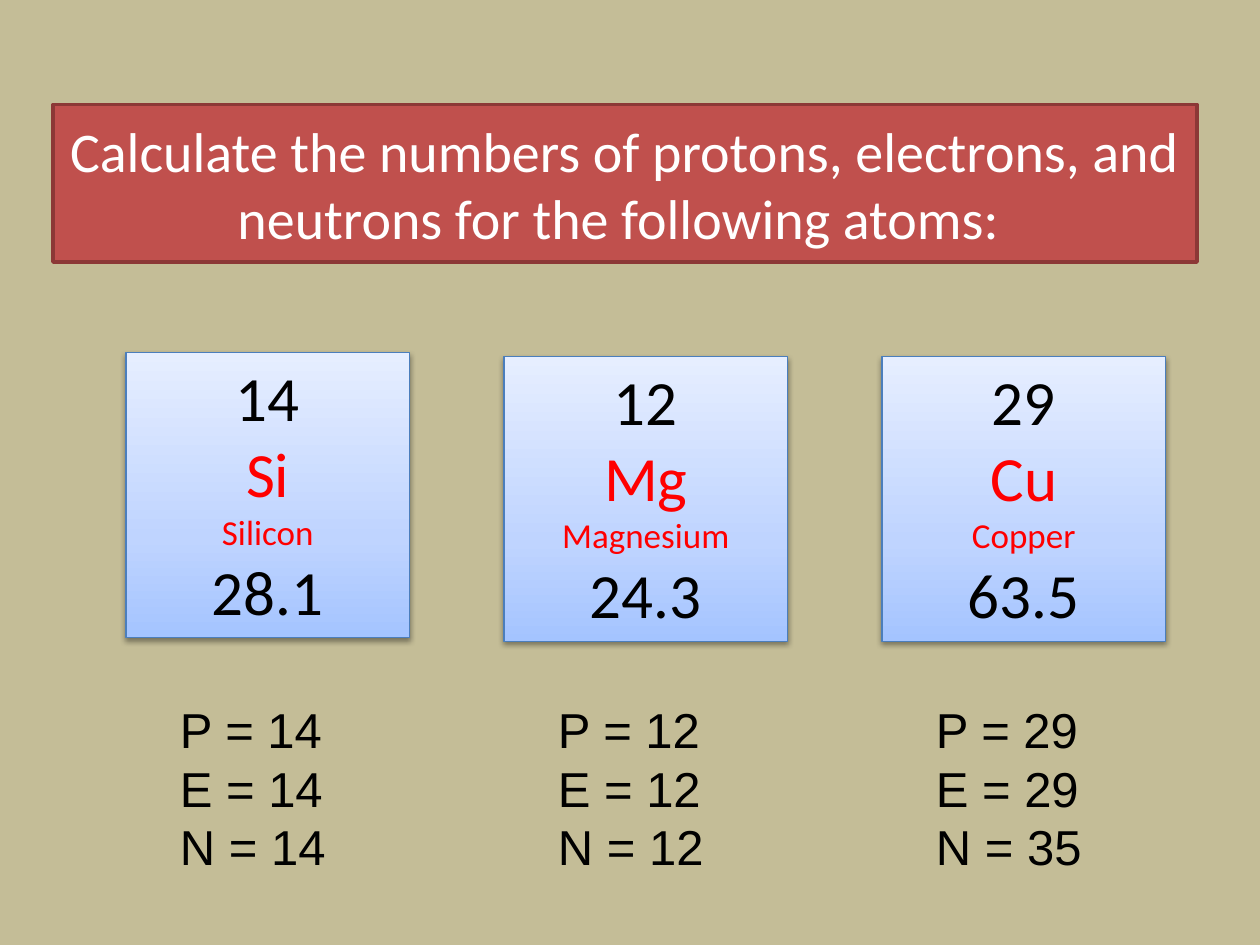
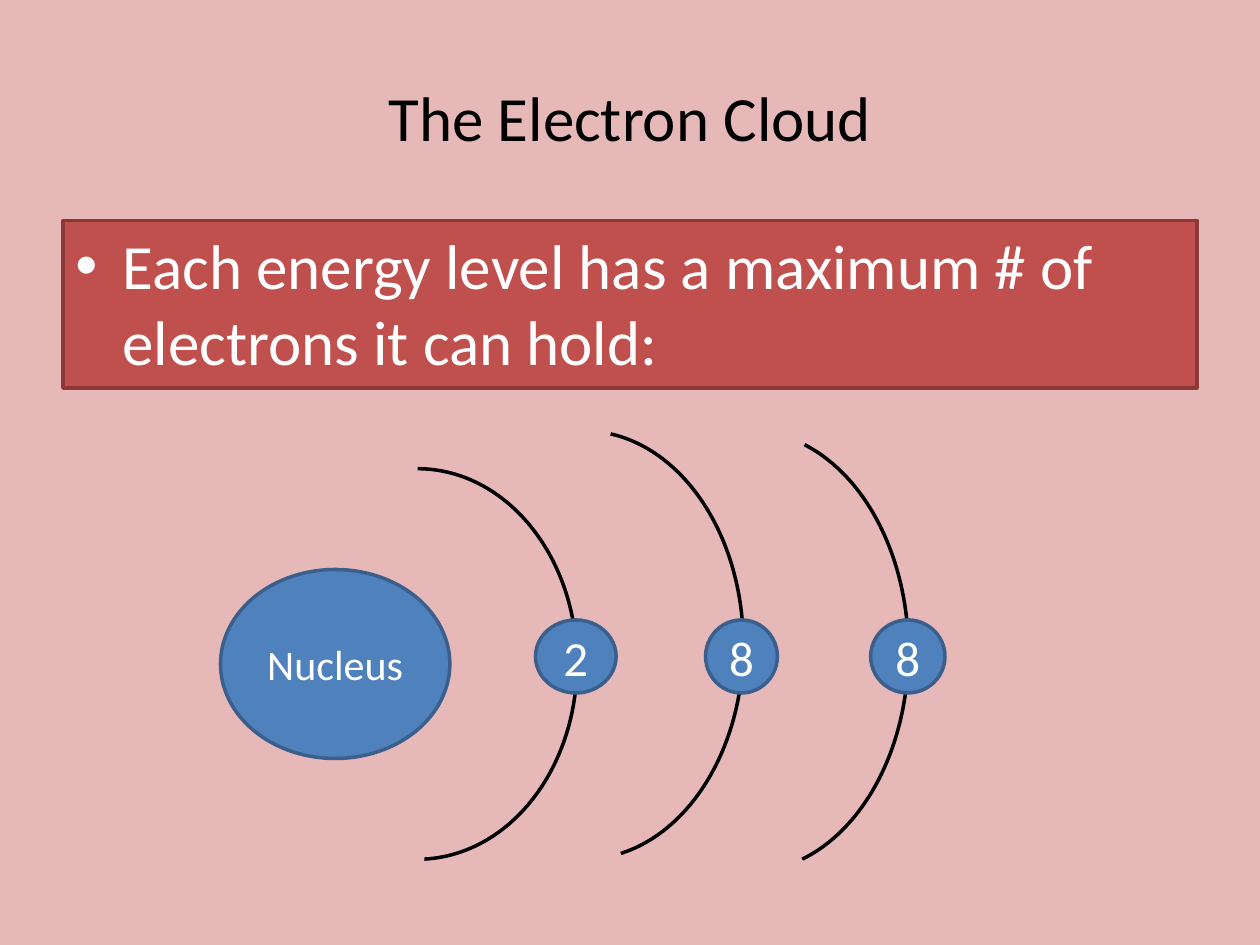
"""Build two chemistry slides: counting particles in atoms, and the electron cloud."""
from typing import NamedTuple

from pptx import Presentation
from pptx import util as u
from pptx.dml.color import RGBColor
from pptx.enum import shapes, text
from pptx.oxml import parse_xml
from pptx.oxml.ns import nsdecls, qn

WIDTH, HEIGHT = u.Inches(10), u.Inches(7.5)
COLUMNS, ROWS = 40, 30

KHAKI = RGBColor(0xC4, 0xBD, 0x97)
PINK = RGBColor(0xE6, 0xB9, 0xB8)
BRICK = RGBColor(0xC0, 0x50, 0x4D)
BRICK_EDGE = RGBColor(0x8C, 0x38, 0x36)
BLUE = RGBColor(0x4F, 0x81, 0xBD)
BLUE_EDGE = RGBColor(0x3A, 0x5F, 0x8C)
CARD_EDGE = RGBColor(0x4B, 0x7E, 0xBC)
CARD_STOPS = (
    (0, RGBColor(0xA4, 0xC4, 0xFF)),
    (35, RGBColor(0xBF, 0xD4, 0xFF)),
    (100, RGBColor(0xE6, 0xEE, 0xFF)),
)
RED = RGBColor(0xFF, 0x00, 0x00)
BLACK = RGBColor(0x00, 0x00, 0x00)
WHITE = RGBColor(0xFF, 0xFF, 0xFF)

CENTER, LEFT = text.PP_ALIGN.CENTER, text.PP_ALIGN.LEFT
TOP, MIDDLE = text.MSO_ANCHOR.TOP, text.MSO_ANCHOR.MIDDLE
KIND = shapes.MSO_SHAPE


class Cell(NamedTuple):
    column: float
    row: float
    columns: float
    rows: float

    def frame(self) -> tuple[int, int, int, int]:
        """Return left, top, width and height on the slide."""
        across, down = WIDTH / COLUMNS, HEIGHT / ROWS
        return (round(self.column * across), round(self.row * down),
                round(self.columns * across), round(self.rows * down))


class Line(NamedTuple):
    words: str
    size: float
    color: RGBColor
    font: str = "Calibri"


class Atom(NamedTuple):
    number: int
    symbol: str
    name: str
    mass: float
    row: float


class Level(NamedTuple):
    capacity: int
    orbit: Cell
    start: float
    end: float
    badge: Cell


ATOMS = (
    Atom(14, "Si", "Silicon", 28.1, 11.2),
    Atom(12, "Mg", "Magnesium", 24.3, 11.32),
    Atom(29, "Cu", "Copper", 63.5, 11.32),
)
LEVELS = (
    Level(2, Cell(8.2, 14.88, 10.12, 12.4), 270, 88, Cell(17, 19.68, 2.56, 2.32)),
    Level(8, Cell(13.48, 13.68, 10.12, 13.6), 277.2, 79.94, Cell(22.4, 19.68, 2.28, 2.32)),
    Level(8, Cell(18.72, 13.68, 10.12, 14), 285.02, 75.62, Cell(27.64, 19.68, 2.36, 2.32)),
)
FIRST_CARD, CARD_PITCH, CARD_SIDE = 4, 12, 9


def add_slide(deck, background: RGBColor):
    """Add a blank slide with a plain background."""
    slide = deck.slides.add_slide(deck.slide_layouts[6])
    slide.background.fill.solid()
    slide.background.fill.fore_color.rgb = background
    return slide


def write(shape, lines: list[Line], align=CENTER, anchor=MIDDLE, wrap: bool = True) -> None:
    """Write one paragraph for each line."""
    frame = shape.text_frame
    frame.word_wrap = wrap
    frame.vertical_anchor = anchor
    frame.text = "\n".join(line.words for line in lines)
    for paragraph, line in zip(frame.paragraphs, lines):
        paragraph.alignment = align
        paragraph.font.name = line.font
        paragraph.font.size = u.Pt(line.size)
        paragraph.font.color.rgb = line.color


def add_label(slide, cell: Cell, lines: list[Line], align=CENTER, anchor=MIDDLE):
    """Add unframed text."""
    label = slide.shapes.add_textbox(*cell.frame())
    write(label, lines, align, anchor)
    return label


def add_figure(slide, kind, cell: Cell, edge: RGBColor, weight: float = 2,
               fill: RGBColor | None = None):
    """Add a shadowless preset shape, hollow unless a fill is given."""
    figure = slide.shapes.add_shape(kind, *cell.frame())
    figure.shadow.inherit = False
    if fill is None:
        figure.fill.background()
    else:
        figure.fill.solid()
        figure.fill.fore_color.rgb = fill
    figure.line.color.rgb = edge
    figure.line.width = u.Pt(weight)
    return figure


def add_banner(slide, cell: Cell, line: Line, align=CENTER, anchor=MIDDLE):
    """Add a brick-red band with white text."""
    banner = add_figure(slide, KIND.RECTANGLE, cell, BRICK_EDGE, fill=BRICK)
    write(banner, [line], align, anchor)
    return banner


def add_bullet(paragraph, indent: int) -> None:
    """Give a paragraph a hanging round bullet."""
    properties = paragraph._p.get_or_add_pPr()
    properties.set("marL", str(indent))
    properties.set("indent", str(-indent))
    properties.append(parse_xml(f'<a:buFont {nsdecls("a")} typeface="Arial"/>'))
    properties.append(parse_xml(f'<a:buChar {nsdecls("a")} char="•"/>'))


def add_card(slide, cell: Cell, lines: list[Line]) -> None:
    """Add a periodic-table card with a gradient and a soft shadow."""
    card = add_figure(slide, KIND.RECTANGLE, cell, CARD_EDGE, 0.75)
    stops = "".join(f'<a:gs pos="{share * 1000}"><a:srgbClr val="{color}"/></a:gs>'
                    for share, color in CARD_STOPS)
    properties = card._element.spPr
    properties.replace(properties.find(qn("a:noFill")), parse_xml(
        f'<a:gradFill {nsdecls("a")} rotWithShape="1"><a:gsLst>{stops}</a:gsLst>'
        '<a:lin ang="16200000" scaled="0"/></a:gradFill>'))
    properties.find(qn("a:effectLst")).append(parse_xml(
        f'<a:outerShdw {nsdecls("a")} blurRad="{u.Pt(3.1)}" dist="{u.Pt(1.6)}" '
        'dir="5400000" rotWithShape="0"><a:srgbClr val="000000">'
        '<a:alpha val="38000"/></a:srgbClr></a:outerShdw>'))
    write(card, lines, anchor=TOP)


def add_orb(slide, cell: Cell, words: str, size: float) -> None:
    """Add a blue disc with white text."""
    orb = add_figure(slide, KIND.OVAL, cell, BLUE_EDGE, fill=BLUE)
    write(orb, [Line(words, size, WHITE)], wrap=False)


def build_atoms(deck) -> None:
    """Show three atoms with their particle counts."""
    slide = add_slide(deck, KHAKI)
    add_banner(slide, Cell(1.68, 3.32, 36.32, 5), Line(
        "Calculate the numbers of protons, electrons, and "
        "neutrons for the following atoms: ", 32, WHITE))
    for index, atom in enumerate(ATOMS):
        column = FIRST_CARD + index * CARD_PITCH
        add_card(slide, Cell(column, atom.row, CARD_SIDE, CARD_SIDE + 0.04), [
            Line(str(atom.number), 36, BLACK),
            Line(atom.symbol, 36, RED),
            Line(atom.name, 20, RED),
            Line(str(atom.mass), 36, BLACK),
        ])
        counts = {"P": atom.number, "E": atom.number, "N": round(atom.mass) - atom.number}
        add_label(slide, Cell(column + 1.32, 22, 6.32, 6.04),
                  [Line(f"{particle} = {count}", 28, BLACK, "Arial")
                   for particle, count in counts.items()], LEFT, TOP)


def build_cloud(deck) -> None:
    """Show the nucleus and the capacity of each energy level."""
    slide = add_slide(deck, PINK)
    add_label(slide, Cell(2, 1.2, 36, 5), [Line("The Electron Cloud", 36, BLACK)])
    rule = add_banner(slide, Cell(2, 7, 36, 5.32), Line(
        "Each energy level has a maximum # of electrons it can hold:", 36, WHITE), LEFT, TOP)
    add_bullet(rule.text_frame.paragraphs[0], round(WIDTH * 0.0375))
    add_orb(slide, Cell(7, 18.08, 7.28, 6), "Nucleus", 24)
    for level in LEVELS:
        orbit = add_figure(slide, KIND.ARC, level.orbit, BLACK)
        orbit.adjustments[0] = level.start * 0.6
        orbit.adjustments[1] = level.end * 0.6
    for level in LEVELS:
        add_orb(slide, level.badge, str(level.capacity), 28)


def main() -> None:
    """Build and save the deck."""
    deck = Presentation()
    deck.slide_width, deck.slide_height = WIDTH, HEIGHT
    build_atoms(deck)
    build_cloud(deck)
    deck.save("out.pptx")


if __name__ == "__main__":
    main()
